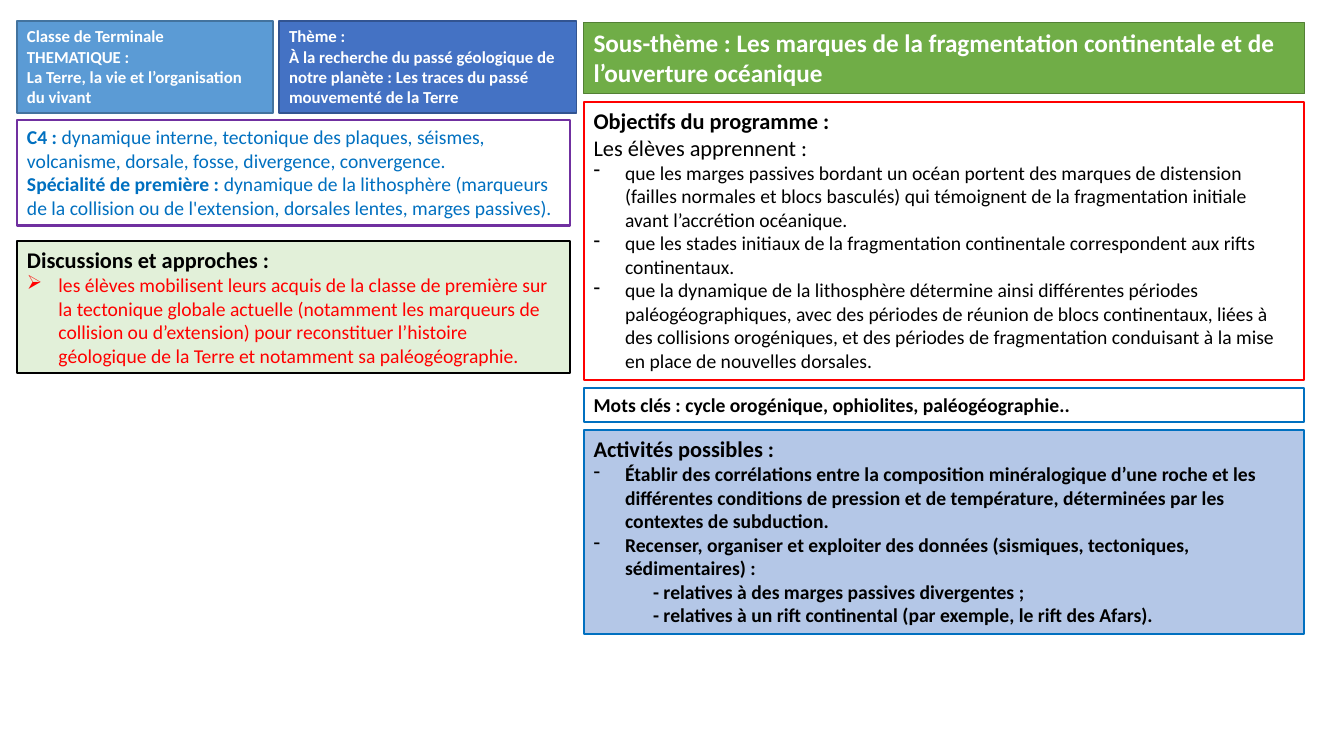
from dataclasses import dataclass, field
from lxml.etree import SubElement
from pptx import Presentation
from pptx.dml.color import RGBColor as Rgb
from pptx.enum.shapes import MSO_SHAPE as Shape
from pptx.enum.text import MSO_ANCHOR as Anchor, MSO_AUTO_SIZE as Auto, PP_ALIGN as Align
from pptx.oxml.ns import qn
from pptx.util import Pt


@dataclass
class Theme:
    font: str = "Calibri"
    hues: dict = field(default_factory=lambda: dict(
        white="FFFFFF", black="000000", red="FF0000", blue="0070C0",
        purple="7030A0", sky="5B9BD5", steel="43739E", royal="4472C4",
        navy="325491", green="70AD47", forest="538035", mint="E2F0D9",
        pale="B4C7E7"))
    types: dict = field(default_factory=lambda: dict(
        label=dict(size=12, bold=True, hue="white"),
        title=dict(size=18, bold=True, hue="white"),
        head=dict(size=16, bold=True, hue="black"),
        lead=dict(size=16, bold=False, hue="black"),
        body=dict(size=14, bold=False, hue="black"),
        strong=dict(size=14, bold=True, hue="black"),
        recall=dict(size=14, bold=False, hue="blue"),
        term=dict(size=14, bold=True, hue="blue"),
        talk=dict(size=14, bold=False, hue="red")))

    def rgb(self, hue):
        return Rgb.from_string(self.hues[hue])


class Deck:
    def __init__(self, theme):
        self.theme = theme
        self.show = Presentation()
        self.show.slide_width, self.show.slide_height = Pt(960), Pt(540)
        self.slide = self.show.slides.add_slide(self.show.slide_layouts[6])

    def box(self, spot, fill, edge, width, items):
        shape = self.slide.shapes.add_shape(Shape.RECTANGLE, *map(Pt, spot))
        shape.shadow.inherit = False
        if fill:
            shape.fill.solid()
            shape.fill.fore_color.rgb = self.theme.rgb(fill)
        else:
            shape.fill.background()
        shape.line.color.rgb = self.theme.rgb(edge)
        shape.line.width = Pt(width)
        frame = shape.text_frame
        form = dict(word_wrap=True, auto_size=Auto.SHAPE_TO_FIT_TEXT,
                    vertical_anchor=Anchor.TOP)
        for name, value in form.items():
            setattr(frame, name, value)
        for i, item in enumerate(items):
            para = frame.add_paragraph() if i else frame.paragraphs[0]
            self.line(para, *item)

    def line(self, para, runs, mark=None, left=0):
        para.alignment = Align.LEFT
        props = para._p.get_or_add_pPr()
        if mark:
            left = 22.5
            props.set("indent", str(-Pt(left)))
            SubElement(props, qn("a:buChar"), char=mark)
        props.set("marL", str(Pt(left)))
        for kind, text in runs:
            self.run(para, kind, text)

    def run(self, para, kind, text):
        part = para.add_run()
        part.text = text
        style = self.theme.types[kind]
        form = dict(name=self.theme.font, size=Pt(style["size"]), bold=style["bold"])
        for name, value in form.items():
            setattr(part.font, name, value)
        part.font.color.rgb = self.theme.rgb(style["hue"])

    def stack(self, left, top, width, gap, boxes):
        for high, fill, edge, line, items in boxes:
            self.box((left, top, width, high), fill, edge, line, items)
            top += high + gap

    def save(self):
        self.show.save("out.pptx")


def plain(kind, *texts, **form):
    return [([(kind, text)], *form.values()) for text in texts]


def main():
    deck = Deck(Theme())
    deck.box((12.2, 15.1, 182.9, 65.5), "sky", "steel", 1, plain(
        "label", "Classe de Terminale", "THEMATIQUE :",
        "La Terre, la vie et l’organisation du vivant"))
    deck.box((199.4, 15.1, 212.4, 65.5), "royal", "navy", 1, plain(
        "label", "Thème :",
        "À la recherche du passé géologique de notre planète : Les traces du passé mouvementé de la Terre"))

    recall = [
        ([("term", "C4 : "),
          ("recall", "dynamique interne, tectonique des plaques, séismes, volcanisme, dorsale, fosse, divergence, convergence.")],),
        ([("term", "Spécialité de première : "),
          ("recall", "dynamique de la lithosphère (marqueurs de la collision ou de l'extension, dorsales lentes, marges passives).")],)]
    talk = plain("head", "Discussions et approches :") + plain(
        "talk",
        "les élèves mobilisent leurs acquis de la classe de première sur la tectonique globale actuelle (notamment les marqueurs de collision ou d’extension) pour reconstituer l’histoire géologique de la Terre et notamment sa paléogéographie.",
        mark="➢")
    deck.stack(12.2, 85.9, 395.3, 11.2, [
        (75.2, None, "purple", 1.5, recall),
        (94.5, "mint", "black", 1.5, talk)])

    title = plain("title", "Sous-thème : Les marques de la fragmentation continentale et de l’ouverture océanique")
    goals = plain("head", "Objectifs du programme :") + plain(
        "lead", "Les élèves apprennent :") + plain(
        "body",
        "que les marges passives bordant un océan portent des marques de distension (failles normales et blocs basculés) qui témoignent de la fragmentation initiale avant l’accrétion océanique.",
        "que les stades initiaux de la fragmentation continentale correspondent aux rifts continentaux.",
        "que la dynamique de la lithosphère détermine ainsi différentes périodes paléogéographiques, avec des périodes de réunion de blocs continentaux, liées à des collisions orogéniques, et des périodes de fragmentation conduisant à la mise en place de nouvelles dorsales.",
        mark="-")
    words = plain("strong", "Mots clés : cycle orogénique, ophiolites, paléogéographie..")
    tasks = plain("head", "Activités possibles :") + plain(
        "strong",
        "Établir des corrélations entre la composition minéralogique d’une roche et les différentes conditions de pression et de température, déterminées par les contextes de subduction.",
        "Recenser, organiser et exploiter des données (sismiques, tectoniques, sédimentaires) :",
        mark="-") + plain(
        "strong",
        "- relatives à des marges passives divergentes ;",
        "- relatives à un rift continental (par exemple, le rift des Afars).",
        mark=None, left=42.5)
    deck.stack(416.9, 15.9, 514.8, 5.8, [
        (51.1, "green", "forest", 1, title),
        (198.7, None, "red", 1.5, goals),
        (24.3, None, "blue", 1.5, words),
        (145.4, "pale", "blue", 1.5, tasks)])
    deck.save()


if __name__ == "__main__":
    main()
